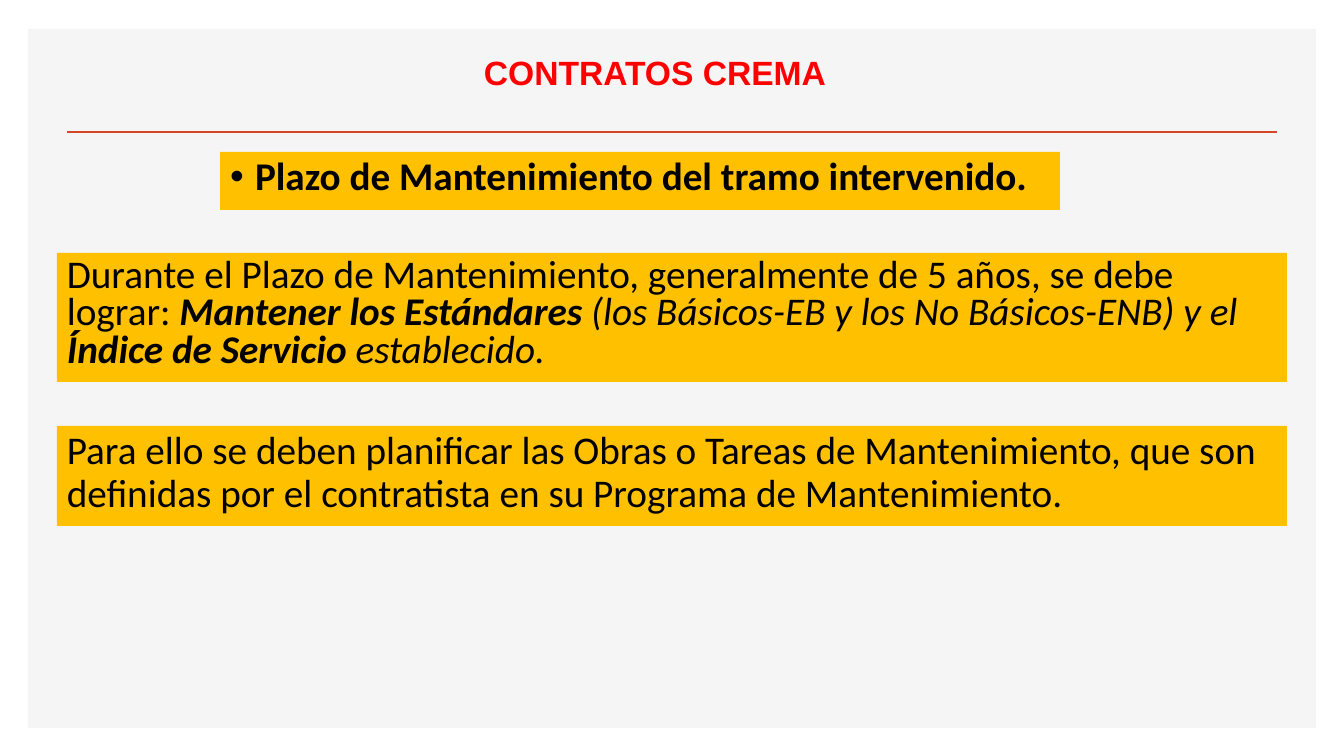
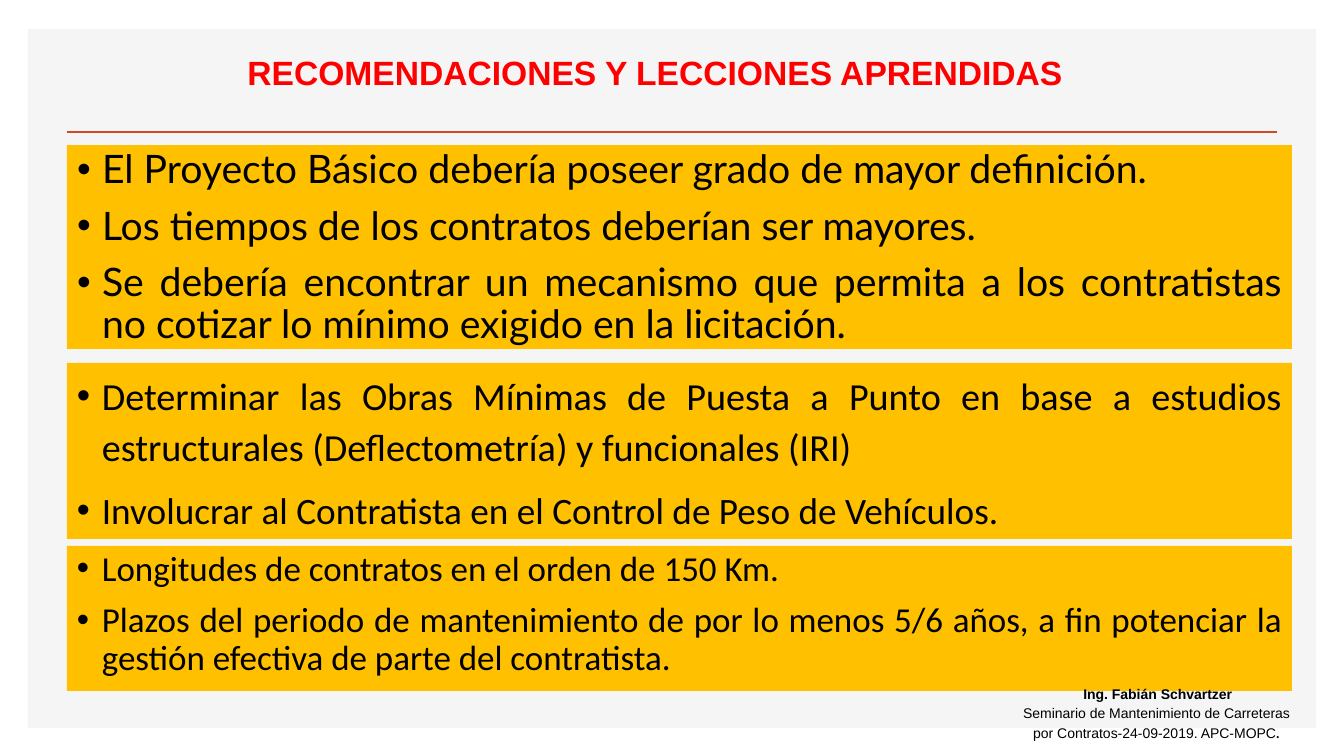
from dataclasses import dataclass

from lxml.etree import SubElement
from pptx import Presentation
from pptx.dml.color import RGBColor
from pptx.enum.shapes import MSO_CONNECTOR as Connector, MSO_SHAPE as Shape
from pptx.enum.text import MSO_ANCHOR as Anchor, MSO_AUTO_SIZE as AutoSize, PP_ALIGN as Align
from pptx.oxml.ns import qn
from pptx.util import Emu, Pt

PX_PER_INCH = 100.8
PAGE_SIZE = (1344, 756)
WHITE, PANEL, RULE = "FFFFFF", "F5F5F5", "D24726"
AMBER, RED, BLACK = "FFC000", "FF0000", "000000"
TITLE_FRAME = (233, 47, 844, 50)
INDENT = 25


@dataclass(frozen=True)
class Span:
    text: str
    bold: bool | None = None
    italic: bool | None = None
    size: float | None = None
    font: str | None = None


@dataclass(frozen=True)
class Para:
    spans: tuple[Span, ...]
    size: float
    bold: bool = False


@dataclass(frozen=True)
class Block:
    frame: tuple[int, int, int, int]
    paras: tuple[Para, ...]
    font: str = "Calibri"
    color: str = BLACK
    fill: str | None = AMBER
    align: Align = Align.LEFT
    line_spacing: float = 0.9
    bullets: bool = False
    wrap: bool = True


@dataclass(frozen=True)
class Page:
    title: str
    body: Block
    boxes: tuple[Block, ...]


def plain(text: str, size: float, bold: bool = False) -> Para:
    return Para((Span(text),), size, bold)


def bullet_list(frame: tuple[int, int, int, int], *paras: Para,
                font: str = "Calibri", line_spacing: float = 0.9) -> Block:
    return Block(frame, paras, font=font, align=Align.JUSTIFY,
                 line_spacing=line_spacing, bullets=True)


def caption(frame: tuple[int, int, int, int], para: Para,
            align: Align, wrap: bool = True) -> Block:
    return Block(frame, (para,), font="Arial", fill=None, align=align,
                 line_spacing=1.0, wrap=wrap)


PAGES = (
    Page(
        "CONTRATOS CREMA",
        bullet_list((220, 152, 840, 58),
                    plain("Plazo de Mantenimiento del tramo intervenido.", 28, bold=True)),
        (
            Block((57, 253, 1230, 129), (Para((
                Span("Durante el Plazo de Mantenimiento, generalmente de 5 años, "
                     "se debe lograr: "),
                Span("Mantener los Estándares ", bold=True, italic=True),
                Span("(los Básicos-EB y los No Básicos-ENB) y el ", italic=True),
                Span("Índice de Servicio ", bold=True, italic=True),
                Span("establecido.", italic=True),
            ), 28),), line_spacing=0.8),
            Block((57, 426, 1230, 100), (
                plain("Para ello se deben planificar las Obras o Tareas de Mantenimiento, "
                      "que son definidas por el contratista en su Programa de "
                      "Mantenimiento.", 28),
            )),
        ),
    ),
    Page(
        "RECOMENDACIONES Y LECCIONES APRENDIDAS",
        bullet_list(
            (67, 145, 1225, 204),
            plain("El Proyecto Básico debería poseer grado de mayor definición.", 28),
            plain("Los tiempos de los contratos deberían ser mayores.", 28),
            plain("Se debería encontrar un mecanismo que permita a los contratistas "
                  "no cotizar lo mínimo exigido en la licitación.", 28),
            font="Lato"),
        (
            bullet_list(
                (67, 363, 1225, 176),
                plain("Determinar las Obras Mínimas de Puesta a Punto en base a estudios "
                      "estructurales (Deflectometría) y funcionales (IRI)", 27.3),
                plain("Involucrar al Contratista en el Control de Peso de Vehículos.", 26.6),
                line_spacing=1.1),
            bullet_list(
                (67, 546, 1225, 145),
                plain("Longitudes de contratos en el orden de 150 Km.", 25),
                plain("Plazos del periodo de mantenimiento de por lo menos 5/6 años, "
                      "a fin potenciar la gestión efectiva de parte del contratista.", 25)),
            caption((1003, 700, 307, 47), Para((
                Span("Seminario de Mantenimiento de Carreteras por "
                     "Contratos-24-09-2019. APC-MOPC"),
                Span(".", size=12, font="Lato"),
            ), 10), Align.CENTER),
            caption((1072, 681, 170, 27),
                    plain("Ing. Fabián Schvartzer", 10, bold=True), Align.RIGHT, wrap=False),
        ),
    ),
)


def px(length: int) -> Emu:
    return Emu(round(length * 914400 / PX_PER_INCH))


def rgb(code: str) -> RGBColor:
    return RGBColor.from_string(code)


def place(shape, frame: tuple[int, int, int, int]) -> None:
    shape.left, shape.top, shape.width, shape.height = map(px, frame)


def add_bullet(paragraph) -> None:
    props = paragraph._p.get_or_add_pPr()
    props.set("marL", str(px(INDENT)))
    props.set("indent", str(-px(INDENT)))
    SubElement(props, qn("a:buFont")).set("typeface", "Arial")
    SubElement(props, qn("a:buChar")).set("char", "•")


def write(shape, block: Block) -> None:
    """Place a text shape and fill it with the block's paragraphs."""
    place(shape, block.frame)
    if block.fill:
        shape.fill.solid()
        shape.fill.fore_color.rgb = rgb(block.fill)
    text = shape.text_frame
    text.word_wrap = block.wrap
    text.auto_size = AutoSize.NONE
    text.vertical_anchor = Anchor.TOP
    for index, para in enumerate(block.paras):
        paragraph = text.add_paragraph() if index else text.paragraphs[0]
        if block.bullets:
            add_bullet(paragraph)
        paragraph.alignment = block.align
        paragraph.line_spacing = block.line_spacing
        paragraph.space_before = Pt(10 if index else 0)
        font = paragraph.font
        font.name, font.size, font.bold = block.font, Pt(para.size), para.bold
        font.color.rgb = rgb(block.color)
        for span in para.spans:
            run = paragraph.add_run()
            run.text = span.text
            if span.bold is not None:
                run.font.bold = span.bold
            if span.italic is not None:
                run.font.italic = span.italic
            if span.size is not None:
                run.font.size = Pt(span.size)
            if span.font is not None:
                run.font.name = span.font


def move_to_layout(shapes: list, layout) -> None:
    """Put shapes behind the layout's placeholders so every slide shows them."""
    tree = layout.shapes.element
    for index, shape in enumerate(shapes):
        shape.element.xpath(".//p:cNvPr")[0].set("id", str(101 + index))
        tree.insert(2 + index, shape.element)


def add_backdrop(slide) -> None:
    """Draw the grey panel and title rule once, on the slide's layout."""
    layout = slide.slide_layout
    layout.background.fill.solid()
    layout.background.fill.fore_color.rgb = rgb(WHITE)
    panel = slide.shapes.add_shape(Shape.RECTANGLE, *map(px, (28, 29, 1288, 699)))
    panel.shadow.inherit = False
    panel.fill.solid()
    panel.fill.fore_color.rgb = rgb(PANEL)
    panel.line.fill.background()
    rule = slide.shapes.add_connector(Connector.STRAIGHT, *map(px, (67, 132, 1277, 132)))
    rule.line.color.rgb = rgb(RULE)
    rule.line.width = Pt(2)
    SubElement(rule.element.spPr, qn("a:effectLst"))
    move_to_layout([panel, rule], layout)


def add_page(deck, layout, page: Page):
    slide = deck.slides.add_slide(layout)
    write(slide.shapes.title, Block(
        TITLE_FRAME, (plain(page.title, 24, bold=True),), font="Arial", color=RED,
        fill=None, align=Align.CENTER, line_spacing=1.0))
    write(slide.placeholders[1], page.body)
    for block in page.boxes:
        write(slide.shapes.add_textbox(*map(px, block.frame)), block)
    return slide


def main() -> None:
    deck = Presentation()
    deck.slide_width, deck.slide_height = map(px, PAGE_SIZE)
    layout = deck.slide_layouts.get_by_name("Title and Content")
    slides = [add_page(deck, layout, page) for page in PAGES]
    add_backdrop(slides[0])
    deck.save("out.pptx")


if __name__ == "__main__":
    main()
